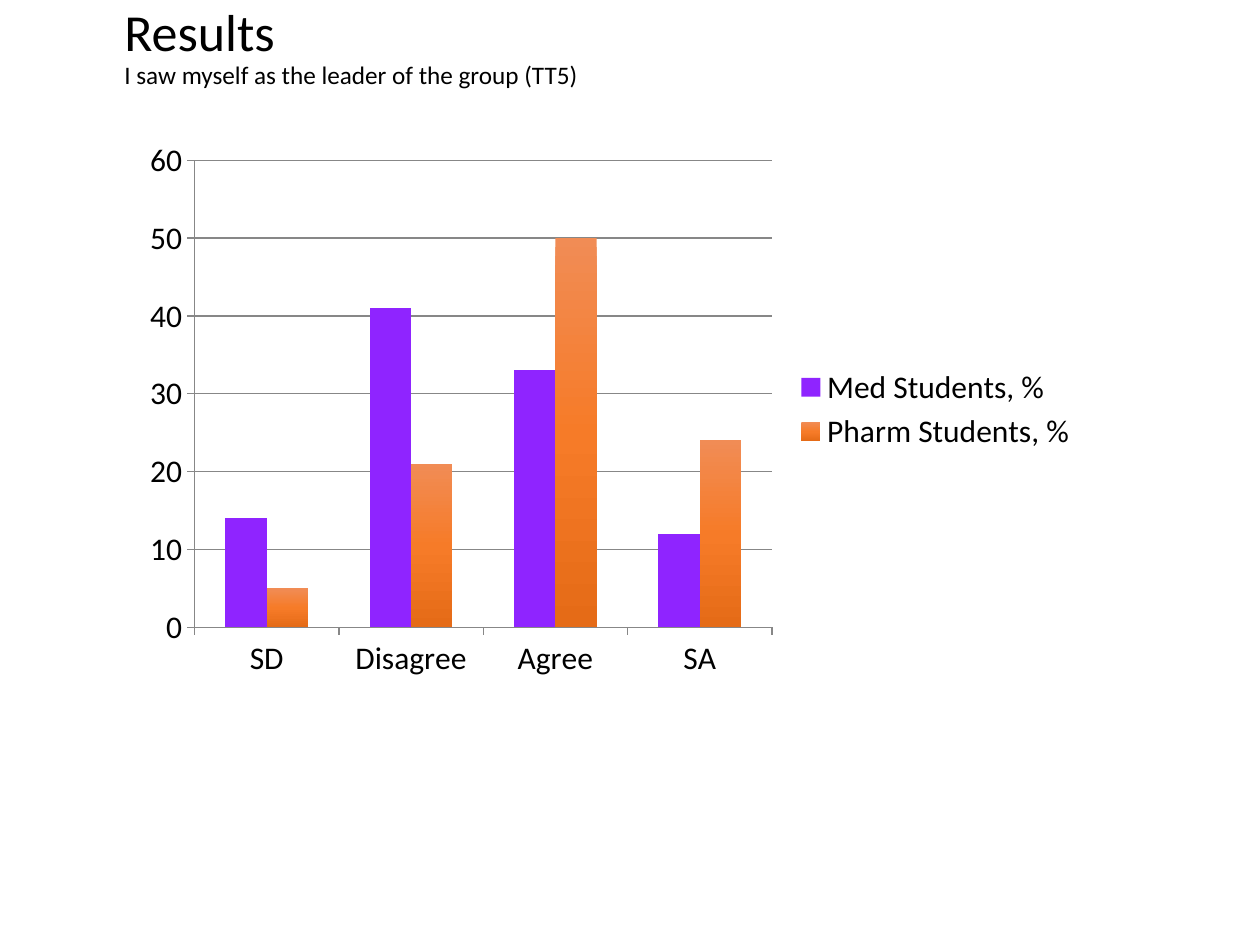
from copy import deepcopy

from pptx import Presentation
from pptx import util as u
from pptx.chart.data import CategoryChartData
from pptx.dml.color import RGBColor
from pptx.enum import chart as ch, text
from pptx.oxml.ns import qn

COLORS = {
    "text": "000000",
    "axis": "878787",
    "med": "8F24FF",
    "pharm_top": "F18C55",
    "pharm_mid": "F67B28",
    "pharm_low": "E56B17",
}
FONT = "Calibri"


def px(n):
    return u.Inches(n / 126)


def rgb(name):
    return RGBColor.from_string(COLORS[name])


def style_font(font, size):
    font.name = FONT
    font.size = u.Pt(size)
    font.color.rgb = rgb("text")


def style_line(line):
    line.color.rgb = rgb("axis")
    line.width = u.Pt(0.75)


def fill_gradient(fill, element, names):
    fill.gradient()
    fill.gradient_angle = 270
    first = next(element.iter(qn("a:gs")))
    first.addnext(deepcopy(first))
    for i, (stop, name) in enumerate(zip(fill.gradient_stops, names)):
        stop.color.rgb = rgb(name)
        stop.position = i / (len(names) - 1)


def add_heading(slide, x, y, w, h):
    tf = slide.shapes.add_textbox(px(x), px(y), px(w), px(h)).text_frame
    tf.word_wrap = True
    tf.vertical_anchor = text.MSO_ANCHOR.TOP
    p = tf.paragraphs[0]
    p.text = "Results\vI saw myself as the leader of the group (TT5)"
    p.line_spacing = 0.9
    for r, size in zip(p.runs, (29.7, 14.4)):
        style_font(r.font, size)


def add_results_chart(slide, x, y, w, h):
    data = CategoryChartData()
    data.categories = ["SD", "Disagree", "Agree", "SA"]
    data.add_series("Med Students, %", (14, 41, 33, 12))
    data.add_series("Pharm Students, %", (5, 21, 50, 24))
    chart = slide.shapes.add_chart(
        ch.XL_CHART_TYPE.COLUMN_CLUSTERED, px(x), px(y), px(w), px(h), data
    ).chart
    style_font(chart.font, 18)
    chart.has_title = False
    chart.has_legend = True
    chart.legend.position = ch.XL_LEGEND_POSITION.RIGHT
    chart.legend.include_in_layout = False

    for axis in (chart.category_axis, chart.value_axis):
        axis.major_tick_mark = ch.XL_TICK_MARK.OUTSIDE
        axis.minor_tick_mark = ch.XL_TICK_MARK.NONE
        style_line(axis.format.line)
    values = chart.value_axis
    values.minimum_scale, values.maximum_scale, values.major_unit = 0, 60, 10
    values.has_major_gridlines = True
    style_line(values.major_gridlines.format.line)

    plot = chart.plots[0]
    plot.gap_width = 150
    plot.overlap = 0
    plot.vary_by_categories = False
    med, pharm = plot.series
    med.format.fill.solid()
    med.format.fill.fore_color.rgb = rgb("med")
    fill_gradient(pharm.format.fill, pharm._element,
                  ("pharm_top", "pharm_mid", "pharm_low"))


def main():
    prs = Presentation()
    prs.slide_width, prs.slide_height = px(1260), px(945)
    slide = prs.slides.add_slide(prs.slide_layouts[6])
    add_heading(slide, 112, 0, 1045, 142)
    add_results_chart(slide, 131, 130, 959, 559)
    prs.save("out.pptx")


if __name__ == "__main__":
    main()
